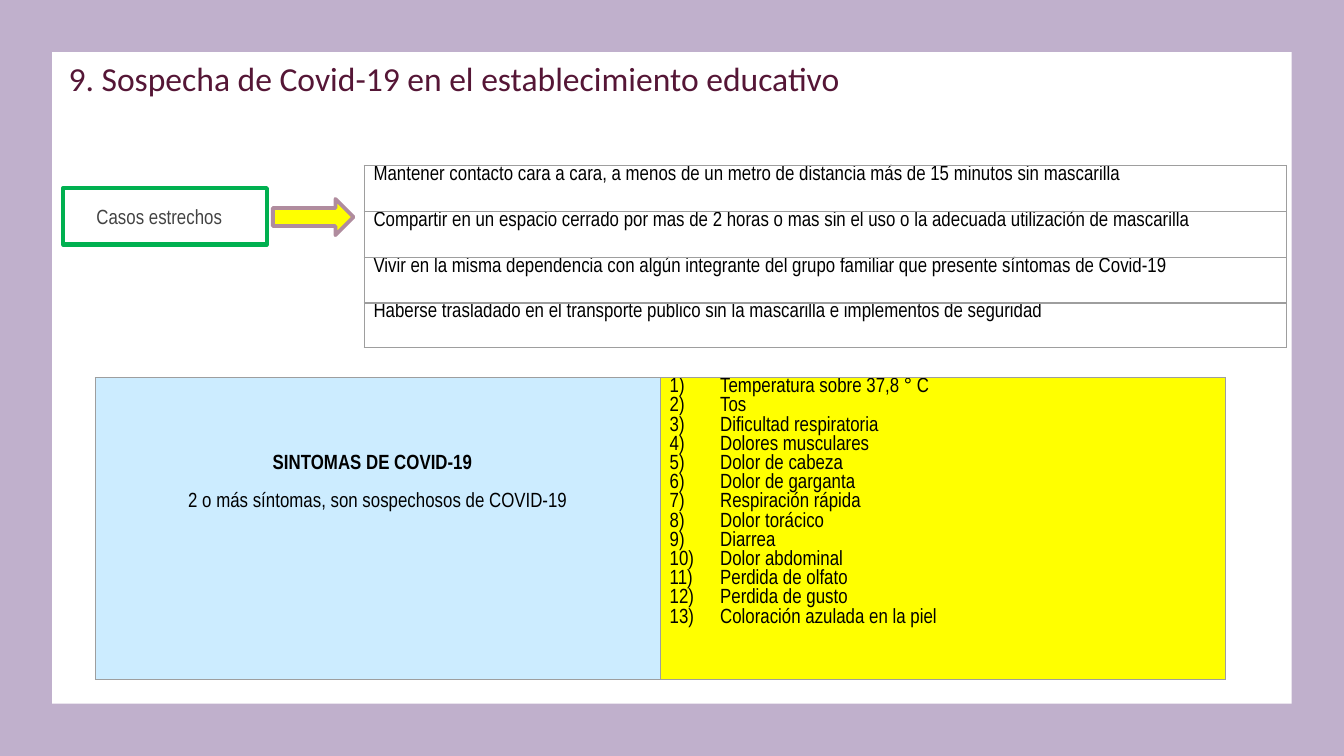
from lxml import etree
from pptx import Presentation
from pptx.dml.color import RGBColor
from pptx.enum import shapes, text
from pptx.oxml import ns
from pptx.util import Pt

TITLE = "9. Sospecha de Covid-19 en el establecimiento educativo"
CASES_LABEL = "Casos estrechos"
CASES = [
    "Mantener contacto cara a cara, a menos de un metro de distancia más de 15 minutos sin mascarilla",
    "Compartir en un espacio cerrado por mas de 2 horas o mas sin el uso o la adecuada utilización de mascarilla",
    "Vivir en la misma dependencia con algún integrante del grupo familiar que presente síntomas de Covid-19",
    "Haberse trasladado en el transporte publico sin la mascarilla e implementos de seguridad",
]
SYMPTOMS_TITLE = "SINTOMAS DE COVID-19"
SYMPTOMS_RULE = "2 o más síntomas, son sospechosos de COVID-19"
SYMPTOMS = [
    "Temperatura sobre 37,8 ° C", "Tos", "Dificultad respiratoria", "Dolores musculares",
    "Dolor de cabeza", "Dolor de garganta", "Respiración rápida", "Dolor torácico", "Diarrea",
    "Dolor abdominal", "Perdida de olfato", "Perdida de gusto", "Coloración azulada en la piel",
]
COLORS = {
    "background": "C0B0CC", "white": "FFFFFF", "title": "551636", "label": "434343",
    "black": "000000", "green": "00B050", "yellow": "FFFF00", "blue": "CCECFF",
    "mauve": "B08C9E", "border": "9E9E9E",
}
WIDTH, HEIGHT, MARGIN = 720, 405, 28
LINE = 10.3
ALIGN = text.PP_ALIGN


def rgb(name):
    return RGBColor.from_string(COLORS[name])


def write(frame, content, size=11, font="Arial Narrow", color="black", bold=False,
          align=ALIGN.JUSTIFY, line=None, before=0, left=0, hanging=0, numbered=False, first=True):
    """Fill the first paragraph of a frame, or add one; left and hanging are in points."""
    para = frame.paragraphs[0] if first else frame.add_paragraph()
    para.alignment = align
    para.space_before = Pt(before)
    if line:
        para.line_spacing = Pt(line)
    props = para._p.get_or_add_pPr()
    props.set("marL", str(Pt(left)))
    props.set("indent", str(-Pt(hanging)))
    if numbered:
        etree.SubElement(props, ns.qn("a:buFont"), typeface="+mj-lt")
        etree.SubElement(props, ns.qn("a:buAutoNum"), type="arabicParenR")
    span = para.add_run()
    span.text = content
    span.font.size, span.font.name, span.font.bold = Pt(size), font, bold
    span.font.color.rgb = rgb(color)


def set_frame(frame, anchor):
    frame.word_wrap = True
    frame.auto_size = text.MSO_AUTO_SIZE.NONE
    frame.vertical_anchor = anchor
    frame.margin_left = frame.margin_right = frame.margin_top = frame.margin_bottom = Pt(7.2)


def add_box(page, kind, left, top, width, height, fill=None, line=None, weight=1):
    box = page.shapes.add_shape(kind, Pt(left), Pt(top), Pt(width), Pt(height))
    box.shadow.inherit = False
    if fill:
        box.fill.solid()
        box.fill.fore_color.rgb = rgb(fill)
    else:
        box.fill.background()
    if line:
        box.line.color.rgb = rgb(line)
        box.line.width = Pt(weight)
    else:
        box.line.fill.background()
    return box


def format_cell(cell, fill=None):
    cell.margin_left = cell.margin_right = Pt(5)
    cell.margin_top = cell.margin_bottom = 0
    props = cell._tc.get_or_add_tcPr()
    for side in ("lnL", "lnR", "lnT", "lnB"):
        edge = etree.SubElement(props, ns.qn(f"a:{side}"), w=str(Pt(0.75)))
        solid = etree.SubElement(edge, ns.qn("a:solidFill"))
        etree.SubElement(solid, ns.qn("a:srgbClr"), val=COLORS["border"])
    if fill:
        cell.fill.solid()
        cell.fill.fore_color.rgb = rgb(fill)
    else:
        cell.fill.background()


def add_grid(page, left, top, widths, heights):
    frame = page.shapes.add_table(len(heights), len(widths), Pt(left), Pt(top),
                                  Pt(sum(widths)), Pt(sum(heights)))
    grid = frame.table
    grid.first_row = grid.horz_banding = False
    for column, width in zip(grid.columns, widths):
        column.width = Pt(width)
    for row, height in zip(grid.rows, heights):
        row.height = Pt(height)
    return grid


def main():
    deck = Presentation()
    deck.slide_width, deck.slide_height = Pt(WIDTH), Pt(HEIGHT)
    page = deck.slides.add_slide(deck.slide_layouts[5])
    page.background.fill.solid()
    page.background.fill.fore_color.rgb = rgb("background")

    panel = add_box(page, shapes.MSO_SHAPE.RECTANGLE, MARGIN, MARGIN,
                    WIDTH - 2 * MARGIN, HEIGHT - 2 * MARGIN, fill="white")
    page.shapes._spTree.insert(2, panel._element)  # behind the title

    title = page.shapes.title
    title.left, title.top, title.width, title.height = Pt(29.5), Pt(23.8), Pt(436.3), Pt(45.4)
    set_frame(title.text_frame, text.MSO_ANCHOR.TOP)
    write(title.text_frame, TITLE, size=18, font="Calibri", color="title", align=ALIGN.LEFT)

    label = add_box(page, shapes.MSO_SHAPE.RECTANGLE, 33.8, 100.8, 109.2, 30.2,
                    line="green", weight=2.25)
    set_frame(label.text_frame, text.MSO_ANCHOR.MIDDLE)
    write(label.text_frame, CASES_LABEL, color="label", left=10.8)
    add_box(page, shapes.MSO_SHAPE.RIGHT_ARROW, 146.2, 106.6, 43.2, 19.4,
            fill="yellow", line="mauve", weight=2)

    cases = add_grid(page, 195.1, 88.6, [493.9], [24.6, 24.6, 24.6, 23.8])
    for row, case in enumerate(CASES):
        cell = cases.cell(row, 0)
        format_cell(cell)
        write(cell.text_frame, case, line=LINE)

    symptoms = add_grid(page, 51.1, 202.3, [302.7, 302.7], [161.6])
    summary, listing = symptoms.cell(0, 0), symptoms.cell(0, 1)
    format_cell(summary, "blue")
    summary.margin_top = Pt(4 * LINE)
    write(summary.text_frame, SYMPTOMS_TITLE, bold=True, line=LINE, left=90)
    write(summary.text_frame, SYMPTOMS_RULE, align=ALIGN.CENTER, line=LINE, before=LINE, first=False)
    format_cell(listing, "yellow")
    for index, symptom in enumerate(SYMPTOMS):
        write(listing.text_frame, symptom, line=LINE, left=27, hanging=27,
              numbered=True, first=index == 0)

    deck.save("out.pptx")


if __name__ == "__main__":
    main()
